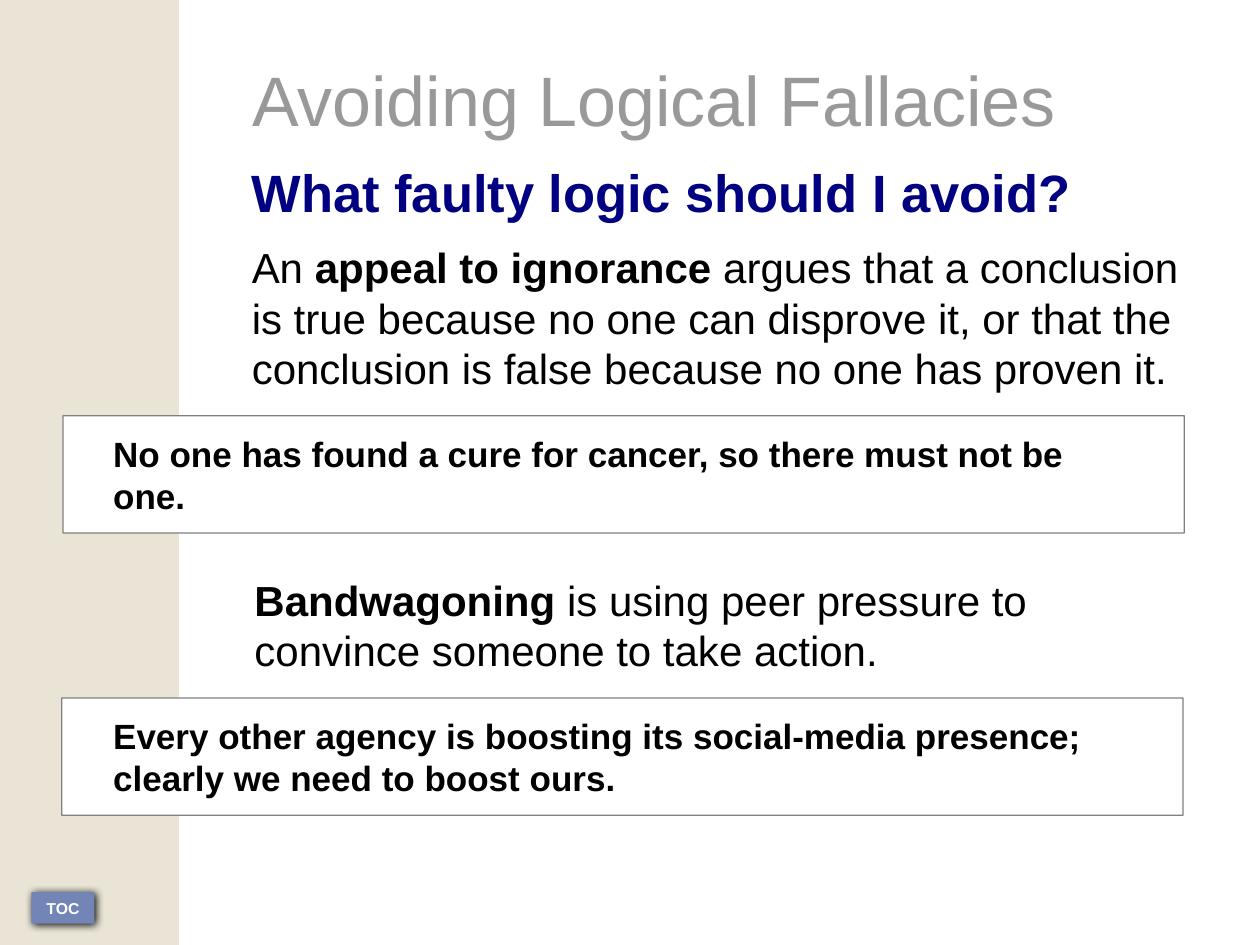
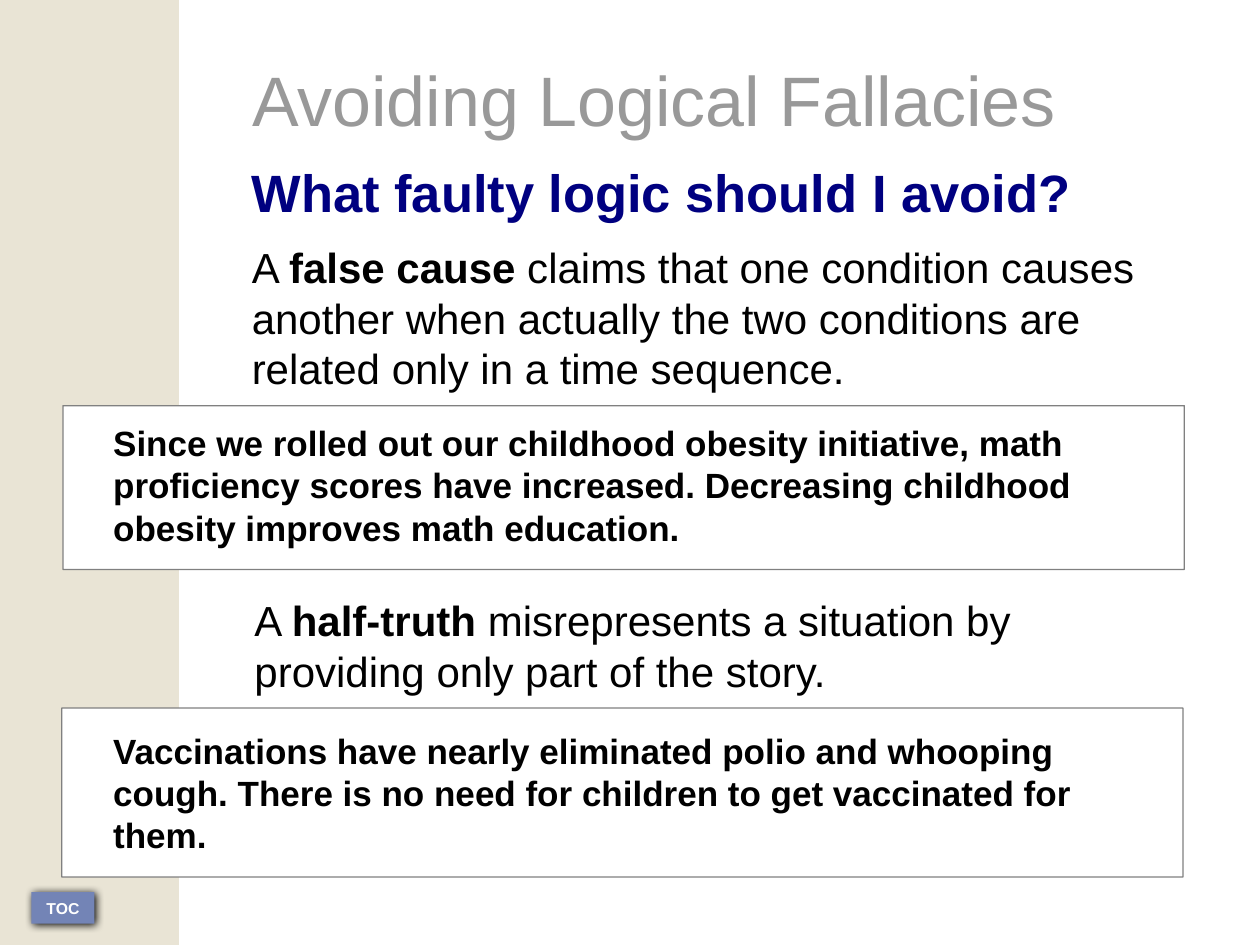
"""Build two slides about avoiding logical fallacies."""
from lxml import etree
from pptx import Presentation, util as u
from pptx.dml.color import RGBColor
from pptx.enum import shapes, text
from pptx.oxml import ns

COLORS = {
    "band": "E9E4D5", "button": "7384B6", "title": "999999", "heading": "000080",
    "body": "000000", "box": "FFFFFF", "outline": "808080",
}
FONT = "Arial"
TITLE = "Avoiding Logical Fallacies"
HEADING = "What faulty logic should I avoid?"

SLIDES = [
    [
        dict(definition=["An ", "appeal to ignorance",
                         " argues that a conclusion is true because no one can disprove it, "
                         "or that the conclusion is false because no one has proven it."],
             example="No one has found a cure for cancer, so there must not be one.",
             box=(0.5, 3.3, 8.9, 0.93), pad=0.08),
        dict(definition=["", "Bandwagoning",
                         " is using peer pressure to convince someone to take action."],
             top=4.5,
             example="Every other agency is boosting its social-media presence; "
                     "clearly we need to boost ours.",
             box=(0.49, 5.54, 8.9, 0.93), pad=0.08),
    ],
    [
        dict(definition=["A ", "false cause",
                         " claims that one condition causes another when actually the two "
                         "conditions are related only in a time sequence."],
             example="Since we rolled out our childhood obesity initiative, math proficiency "
                     "scores have increased. Decreasing childhood obesity improves math education.",
             box=(0.5, 3.22, 8.9, 1.3), pad=0.08),
        dict(definition=["A ", "half-truth",
                         " misrepresents a situation by providing only part of the story."],
             top=4.66,
             example="Vaccinations have nearly eliminated polio and whooping cough. "
                     "There is no need for children to get vaccinated for them.",
             box=(0.49, 5.62, 8.9, 1.34), pad=0.12),
    ],
]


def rgb(name):
    return RGBColor.from_string(COLORS[name])


def write(p, words, size=24, color="body", bold=False, align=text.PP_ALIGN.LEFT, after=0):
    p.alignment = align
    p.space_before, p.space_after = u.Pt(0), u.Pt(after)
    r = p.add_run()
    r.text = words
    r.font.name, r.font.size, r.font.bold = FONT, u.Pt(size), bold
    r.font.color.rgb = rgb(color)


class Deck:
    def __init__(self):
        self.prs = Presentation()
        self.prs.slide_width, self.prs.slide_height = u.Inches(10), u.Inches(7.5)
        self.layout = self.prs.slide_layouts.get_by_name("Title Only")
        self.s = None

    def new_slide(self):
        self.s = self.prs.slides.add_slide(self.layout)

    def frame(self, sp, inset=(0.1, 0.05), anchor=text.MSO_ANCHOR.TOP):
        tf = sp.text_frame
        tf.word_wrap, tf.auto_size = True, text.MSO_AUTO_SIZE.NONE
        tf.vertical_anchor = anchor
        tf.margin_left = tf.margin_right = u.Inches(inset[0])
        tf.margin_top = tf.margin_bottom = u.Inches(inset[1])
        return tf

    def title(self, words):
        sp = self.s.shapes.title
        sp.left, sp.top, sp.width, sp.height = map(u.Inches, (1.9, 0.4, 7.7, 0.8))
        write(self.frame(sp).paragraphs[0], words, size=40, color="title")

    def box(self, at, fill, kind=shapes.MSO_SHAPE.RECTANGLE, outline=None):
        sp = self.s.shapes.add_shape(kind, *map(u.Inches, at))
        sp.shadow.inherit = False
        sp.fill.solid()
        sp.fill.fore_color.rgb = rgb(fill)
        if outline:
            sp.line.color.rgb, sp.line.width = rgb(outline), u.Pt(0.71)
        else:
            sp.line.fill.background()
        return sp

    def text(self, at, **inset):
        return self.frame(self.s.shapes.add_textbox(*map(u.Inches, at)), **inset)

    def define(self, p, runs, **kw):
        for i, words in enumerate(runs):
            if words:
                write(p, words, bold=i == 1, **kw)

    def example(self, words, at, pad):
        sp = self.box(at, "box", shapes.MSO_SHAPE.ROUNDED_RECTANGLE, "outline")
        sp.adjustments[0] = 0.002
        tf = self.text((0.8, at[1] + pad, 8.3, at[3] - 2 * pad))
        write(tf.paragraphs[0], words, size=20, bold=True)

    def cast_shadow(self, sp):
        effects = sp.element.spPr.find(ns.qn("a:effectLst"))
        shadow = etree.SubElement(effects, ns.qn("a:outerShdw"), blurRad=str(u.Pt(5)),
                                  dist=str(u.Pt(1.4)), dir=str(45 * 60000))
        etree.SubElement(shadow, ns.qn("a:srgbClr"), val="000000")

    def furnish_layout(self):
        band = self.box((0, 0, 1.42, 7.5), "band")
        button = self.box((0.25, 7.08, 0.5, 0.25), "button")
        self.cast_shadow(button)
        tf = self.frame(button, anchor=text.MSO_ANCHOR.MIDDLE)
        write(tf.paragraphs[0], "TOC", size=9, color="box", bold=True,
              align=text.PP_ALIGN.CENTER)
        for i, sp in enumerate((band, button)):
            sp.element.nvSpPr.cNvPr.set("id", str(100 + i))
            self.layout.shapes.element.insert(2 + i, sp.element)

    def fallacies(self, first, second):
        self.title(TITLE)
        tf = self.text((1.9, 1.22, 7.7, 2.0))
        write(tf.paragraphs[0], HEADING, size=30, color="heading", bold=True, after=10.9)
        self.define(tf.add_paragraph(), first["definition"], after=10.9)
        self.example(first["example"], first["box"], first["pad"])
        tf = self.text((1.91, second["top"], 7.39, 0.92), inset=(0.11, 0.06))
        self.define(tf.paragraphs[0], second["definition"])
        self.example(second["example"], second["box"], second["pad"])


def main():
    deck = Deck()
    for i, pair in enumerate(SLIDES):
        deck.new_slide()
        if i == 0:
            deck.furnish_layout()
        deck.fallacies(*pair)
    deck.prs.save("out.pptx")


if __name__ == "__main__":
    main()
